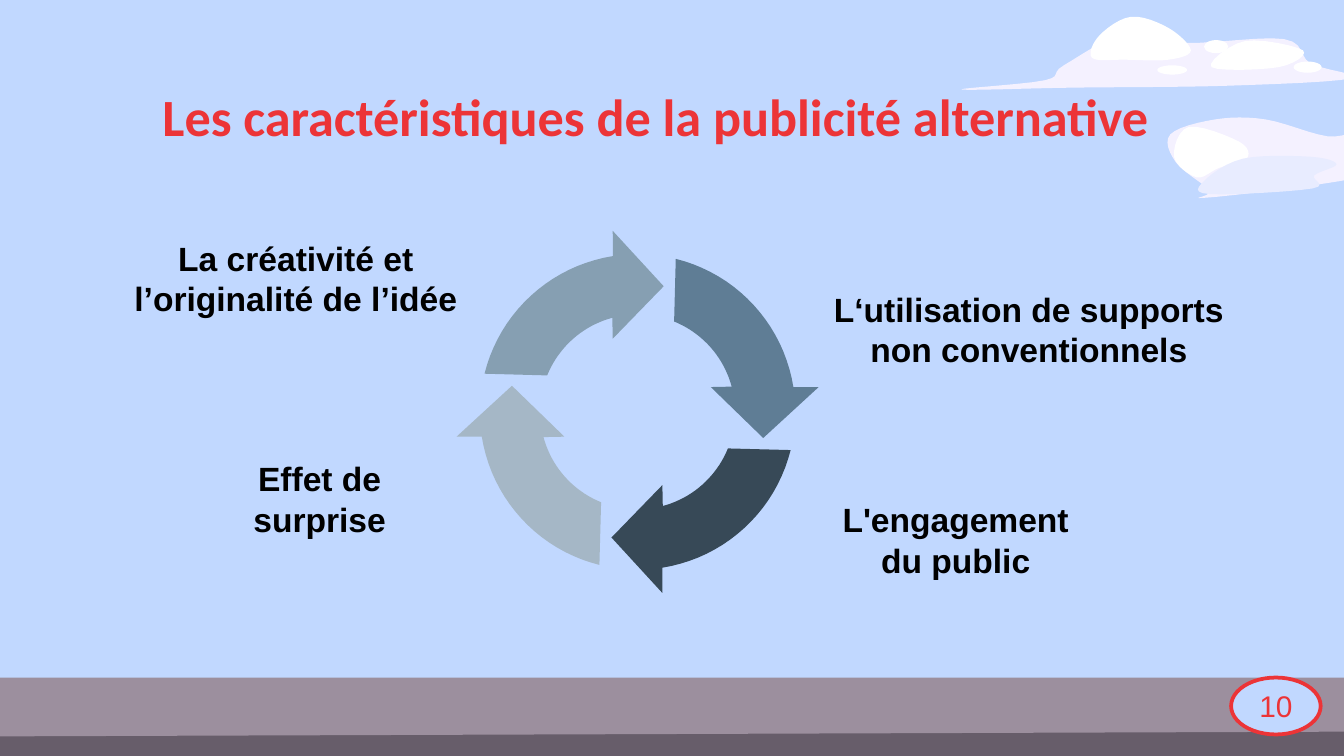
import math

import pptx
import pptx.dml.color
import pptx.enum.shapes
import pptx.enum.text
import pptx.util

Pt = pptx.util.Pt
RGBColor = pptx.dml.color.RGBColor
CENTER = pptx.enum.text.PP_ALIGN.CENTER
LEFT = pptx.enum.text.PP_ALIGN.LEFT

SKY = RGBColor(0xC1, 0xD8, 0xFF)
RED = RGBColor(0xEC, 0x34, 0x37)
BLACK = RGBColor(0, 0, 0)
WHITE = RGBColor(0xFF, 0xFF, 0xFF)
LILAC = RGBColor(0xF4, 0xF1, 0xFF)
HAZE = RGBColor(0xE8, 0xEC, 0xFF)
GROUND_DARK = RGBColor(0x67, 0x5D, 0x6A)
GROUND_LIGHT = RGBColor(0x9C, 0x8F, 0x9E)
ARROW_COLORS = [
    RGBColor(0x86, 0x9F, 0xB2),
    RGBColor(0x5F, 0x7D, 0x95),
    RGBColor(0x37, 0x49, 0x57),
    RGBColor(0xA5, 0xB7, 0xC6),
]

W, H = 720, 405
GROUND_TOP = 363
RING_CENTER = (341.6, 220.7)
STEPS = 6  # straight pieces per curve

# Points on each cloud's edge, joined by a smooth curve
CLOUDS = [
    (LILAC, [(651, 64), (678, 64), (711, 73), (731, 71), (748, 83), (734, 93),
             (705, 99), (645, 106), (648, 102), (630, 87), (627, 72)]),
    (WHITE, [(637, 68), (664, 76), (668, 85), (653, 90), (641, 95), (629, 84)]),
    (HAZE, [(648, 104), (703, 101), (704, 94), (716, 88), (702, 84), (666, 85),
            (645, 97)]),
    (LILAC, [(605, 17), (570, 35), (560, 43), (515, 48), (575, 47), (657, 46),
             (724, 42), (702, 34), (688, 21), (635, 23)]),
    (WHITE, [(649, 36), (667, 22), (698, 27), (685, 36)]),
    (WHITE, [(638, 27), (626, 15), (606, 9), (589, 19), (585, 31), (603, 32),
             (626, 32)]),
]

# Small highlights: left, top, width, height
PUFFS = [(645, 21.5, 13, 7), (693, 33, 15, 6), (620, 35, 16, 5)]

LABELS = [
    (58, 124, 201, ["La créativité et l’originalité de l’idée"]),
    (438.5, 151, 225.5, ["L‘utilisation de supports", "non conventionnels"]),
    (443.5, 264, 137, ["L'engagement", "du public"]),
    (128, 242, 86.5, ["Effet de", "surprise"]),
]


def smooth(points):
    """Closed curve that passes through every point."""
    n = len(points)
    out = []
    for i in range(n):
        corners = [points[(i + k) % n] for k in (-1, 0, 1, 2)]
        for step in range(STEPS):
            t = step / STEPS
            out.append(tuple(
                b + t / 2 * (c - a + t * (2 * a - 5 * b + 4 * c - d
                                          + t * (3 * (b - c) + d - a)))
                for a, b, c, d in zip(*corners)))
    return out


def arc(radius, start, end):
    """Points on a circle around the origin, angles in degrees."""
    angles = [math.radians(start + (end - start) * i / 20) for i in range(21)]
    return [(radius * math.cos(a), radius * math.sin(a)) for a in angles]


def ring_arrow(turns):
    """Outline of the upper left arrow, turned clockwise by quarters."""
    outline = [(-13.3, -68), (-13.3, -97), *arc(84.5, 261, 194),
               *arc(52.2, 202, 255), (-13.3, -39.2), (14, -67.3)][1:]
    for _ in range(turns):
        outline = [(-y, x) for x, y in outline]
    cx, cy = RING_CENTER
    return [(cx + x, cy + y) for x, y in outline]


def paint(s, color):
    s.shadow.inherit = False
    s.fill.solid()
    s.fill.fore_color.rgb = color
    s.line.fill.background()


def add_outline(slide, color, points):
    pts = [(Pt(x), Pt(y)) for x, y in points]
    builder = slide.shapes.build_freeform(*pts[0])
    builder.add_line_segments(pts[1:], close=True)
    paint(builder.convert_to_shape(), color)


def add_oval(slide, color, left, top, width, height):
    s = slide.shapes.add_shape(pptx.enum.shapes.MSO_SHAPE.OVAL,
                               Pt(left), Pt(top), Pt(width), Pt(height))
    paint(s, color)
    return s


def add_ground(slide):
    for color, left, right in ((GROUND_DARK, H, H), (GROUND_LIGHT, 394.5, 392)):
        add_outline(slide, color, [(0, GROUND_TOP), (W, GROUND_TOP), (W, right), (0, left)])


def write(tf, lines, font, size, color, bold=False, align=CENTER):
    tf.text = "\n".join(lines)
    for p in tf.paragraphs:
        p.alignment = align
        for r in p.runs:
            r.font.name = font
            r.font.size = Pt(size)
            r.font.bold = bold
            r.font.color.rgb = color


def add_text(slide, left, top, width, height):
    tf = slide.shapes.add_textbox(Pt(left), Pt(top), Pt(width), Pt(height)).text_frame
    tf.word_wrap = True
    return tf


def add_title(slide, text):
    tf = add_text(slide, 80, 38, 560, 45)
    tf.margin_top = tf.margin_bottom = Pt(7.2)
    write(tf, [text], "Calibri", 28, RED, True, LEFT)


def add_label(slide, left, top, width, lines):
    tf = add_text(slide, left, top, width, 51)
    tf.word_wrap = len(lines) == 1
    write(tf, lines, "Arial", 18, BLACK, True)


def add_page_number(slide, text):
    s = add_oval(slide, SKY, 659.5, GROUND_TOP, 48, 30.5)
    s.line.color.rgb = RED
    s.line.width = Pt(2)
    tf = s.text_frame
    tf.word_wrap = False
    tf.vertical_anchor = pptx.enum.text.MSO_ANCHOR.MIDDLE
    write(tf, [text], "Arial", 16, RED)


def main():
    prs = pptx.Presentation()
    prs.slide_width, prs.slide_height = Pt(W), Pt(H)
    slide = prs.slides.add_slide(prs.slide_layouts[6])
    slide.background.fill.solid()
    slide.background.fill.fore_color.rgb = SKY
    add_ground(slide)
    for color, points in CLOUDS:
        add_outline(slide, color, smooth(points))
    for puff in PUFFS:
        add_oval(slide, WHITE, *puff)
    add_title(slide, "Les caractéristiques de la publicité alternative")
    for turns, color in enumerate(ARROW_COLORS):
        add_outline(slide, color, ring_arrow(turns))
    for label in LABELS:
        add_label(slide, *label)
    add_page_number(slide, "10")
    prs.save("out.pptx")


if __name__ == "__main__":
    main()
